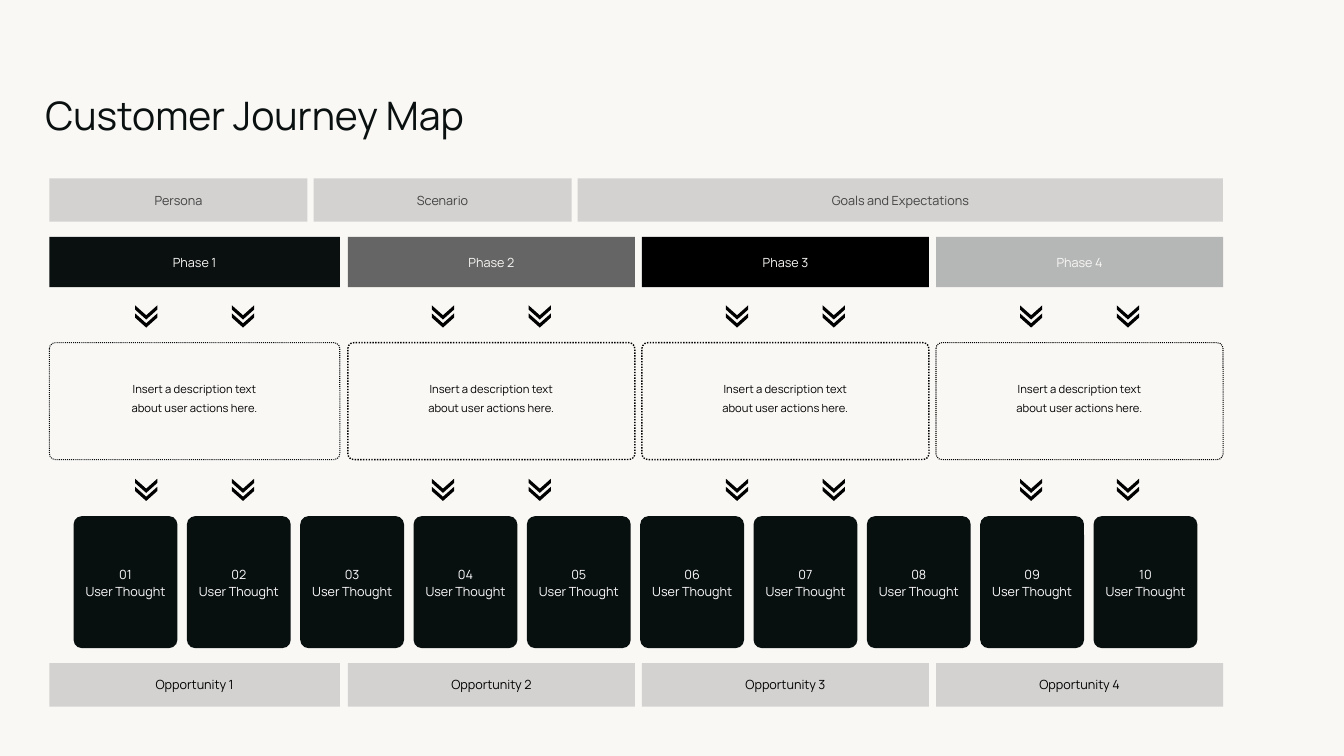
from lxml import etree
from pptx import Presentation
from pptx.dml.color import RGBColor
from pptx.enum.dml import MSO_LINE
from pptx.enum.shapes import MSO_SHAPE
from pptx.enum.text import MSO_ANCHOR, MSO_AUTO_SIZE, PP_ALIGN
from pptx.oxml.ns import qn
from pptx.util import Inches, Pt

RECT, ROUND, CHEVRON = MSO_SHAPE.RECTANGLE, MSO_SHAPE.ROUNDED_RECTANGLE, MSO_SHAPE.CHEVRON
CENTER, LEFT_ALIGN = PP_ALIGN.CENTER, PP_ALIGN.LEFT
MIDDLE, TOP = MSO_ANCHOR.MIDDLE, MSO_ANCHOR.TOP
NO_FIT, DOT = MSO_AUTO_SIZE.NONE, MSO_LINE.ROUND_DOT

FONT = "Manrope"
PAPER = RGBColor(0xF9, 0xF8, 0xF5)
INK = RGBColor(0x09, 0x10, 0x0F)
CARD = RGBColor(0x08, 0x10, 0x0F)
CARD_TEXT = RGBColor(0xFE, 0xFC, 0xFF)
BLACK = RGBColor(0x00, 0x00, 0x00)
GRAY = RGBColor(0x65, 0x65, 0x65)
SILVER = RGBColor(0xB5, 0xB7, 0xB7)
BAR = RGBColor(0xBF, 0xBF, 0xBF)
BAR_TEXT = RGBColor(0x42, 0x42, 0x42)

LEFT, RIGHT, GAP = 0.49, 12.13, 0.07
SECOND = 3.45
PITCH = (RIGHT - SECOND + GAP) / 3
COLUMNS = [(LEFT, 2.88)] + [(SECOND + i * PITCH, PITCH - GAP) for i in range(3)]


def add_box(shapes, kind, box, fill=None, adj=None):
    """Add a flat preset shape without an outline."""
    sp = shapes.add_shape(kind, *map(Inches, box))
    sp.shadow.inherit = False
    sp.line.fill.background()
    if fill is None:
        sp.fill.background()
    else:
        sp.fill.solid()
        sp.fill.fore_color.rgb = fill
    if adj is not None:
        sp.adjustments[0] = adj
    return sp


def set_text(sp, lines, size, color, align=CENTER, anchor=MIDDLE, insets=(0.1, 0.05)):
    """Fill a shape with one paragraph per line and return its paragraphs."""
    tf = sp.text_frame
    tf.word_wrap = True
    tf.auto_size = NO_FIT
    tf.vertical_anchor = anchor
    tf.margin_left = tf.margin_right = Inches(insets[0])
    tf.margin_top = tf.margin_bottom = Inches(insets[1])
    tf.text = "\n".join(lines)
    for p in tf.paragraphs:
        p.alignment = align
        p.font.name, p.font.size, p.font.color.rgb = FONT, Pt(size), color
    return tf.paragraphs


def add_bar(s, box, label, color):
    """Add a translucent gray bar with a centred label."""
    sp = add_box(s.shapes, RECT, box, BAR)
    rgb = sp.fill._xPr.find(qn("a:solidFill")).find(qn("a:srgbClr"))
    etree.SubElement(rgb, qn("a:alpha")).set("val", "65000")
    set_text(sp, [label], 9, color)


def add_title(s, box):
    """Place and format the slide title."""
    sp = s.shapes.title
    sp.left, sp.top, sp.width, sp.height = map(Inches, box)
    p = set_text(sp, ["Customer Journey Map"], 28, INK, LEFT_ALIGN, TOP, (0, 0))[0]
    p.space_before, p.space_after, p.line_spacing = Pt(0), Pt(10), 1.0


def add_context(s, top, height):
    """Add the persona, scenario and goals bars."""
    width, gap = 2.56, 0.06
    for i, label in enumerate(("Persona", "Scenario", "Goals and Expectations")):
        x = LEFT + i * (width + gap)
        add_bar(s, (x, top, RIGHT - x if i == 2 else width, height), label, BAR_TEXT)


def add_phases(s, top, height):
    """Add the phase headers, one per column."""
    fills = (INK, GRAY, BLACK, SILVER)
    for n, ((x, width), fill) in enumerate(zip(COLUMNS, fills), 1):
        sp = add_box(s.shapes, CHEVRON, (x, top, width, height), fill, 0)
        set_text(sp, [f"Phase {n}"], 9, PAPER)


def add_arrows(s, middle):
    """Add two double downward chevrons per column, grouped by column."""
    w, h = 0.14, 0.22
    for x, width in COLUMNS:
        group = s.shapes.add_group_shape()
        for dx in (-0.48, 0.48):
            for dy in (0.04, -0.04):
                box = (x + width / 2 + dx - w / 2, middle + dy - h / 2, w, h)
                add_box(group.shapes, CHEVRON, box, BLACK, 0.7).rotation = 90


def add_actions(s, top, height):
    """Add the dotted user action boxes, one per column."""
    lines = ("Insert a description text", "about user actions here.")
    styles = ((INK, 0.75), (BLACK, 1), (BLACK, 1), (BLACK, 0.75))
    for (x, width), (color, weight) in zip(COLUMNS, styles):
        sp = add_box(s.shapes, ROUND, (x, top, width, height), adj=0.05)
        sp.line.color.rgb = color
        sp.line.width = Pt(weight)
        sp.line.dash_style = DOT
        first, second = set_text(sp, lines, 8, BLACK, insets=(0.16, 0.16))
        first.line_spacing = second.line_spacing = 0.42
        second.space_before = Pt(10)


def add_thoughts(s, left, top, height, count=10):
    """Add the row of numbered user thought cards."""
    width, pitch = 1.03, 1.124
    for i in range(count):
        sp = add_box(s.shapes, ROUND, (left + i * pitch, top, width, height), CARD, 0.08)
        lines = (f"{i + 1:02d}", "User Thought")
        for p in set_text(sp, lines, 9, CARD_TEXT, insets=(0.07, 0)):
            p.line_spacing = 1.15


def add_opportunities(s, top, height):
    """Add the opportunity bars, one per column."""
    for n, (x, width) in enumerate(COLUMNS, 1):
        add_bar(s, (x, top, width, height), f"Opportunity {n}", BLACK)


def main():
    """Build the customer journey map slide."""
    prs = Presentation()
    prs.slide_width, prs.slide_height = Inches(13.33), Inches(7.5)
    s = prs.slides.add_slide(prs.slide_layouts[5])
    s.background.fill.solid()
    s.background.fill.fore_color.rgb = PAPER
    add_title(s, (0.45, 0.91, 9.23, 0.51))
    add_context(s, 1.77, 0.43)
    add_phases(s, 2.35, 0.5)
    add_arrows(s, 3.14)
    add_actions(s, 3.4, 1.16)
    add_arrows(s, 4.86)
    add_thoughts(s, 0.73, 5.12, 1.31)
    add_opportunities(s, 6.58, 0.43)
    prs.save("out.pptx")


if __name__ == "__main__":
    main()
